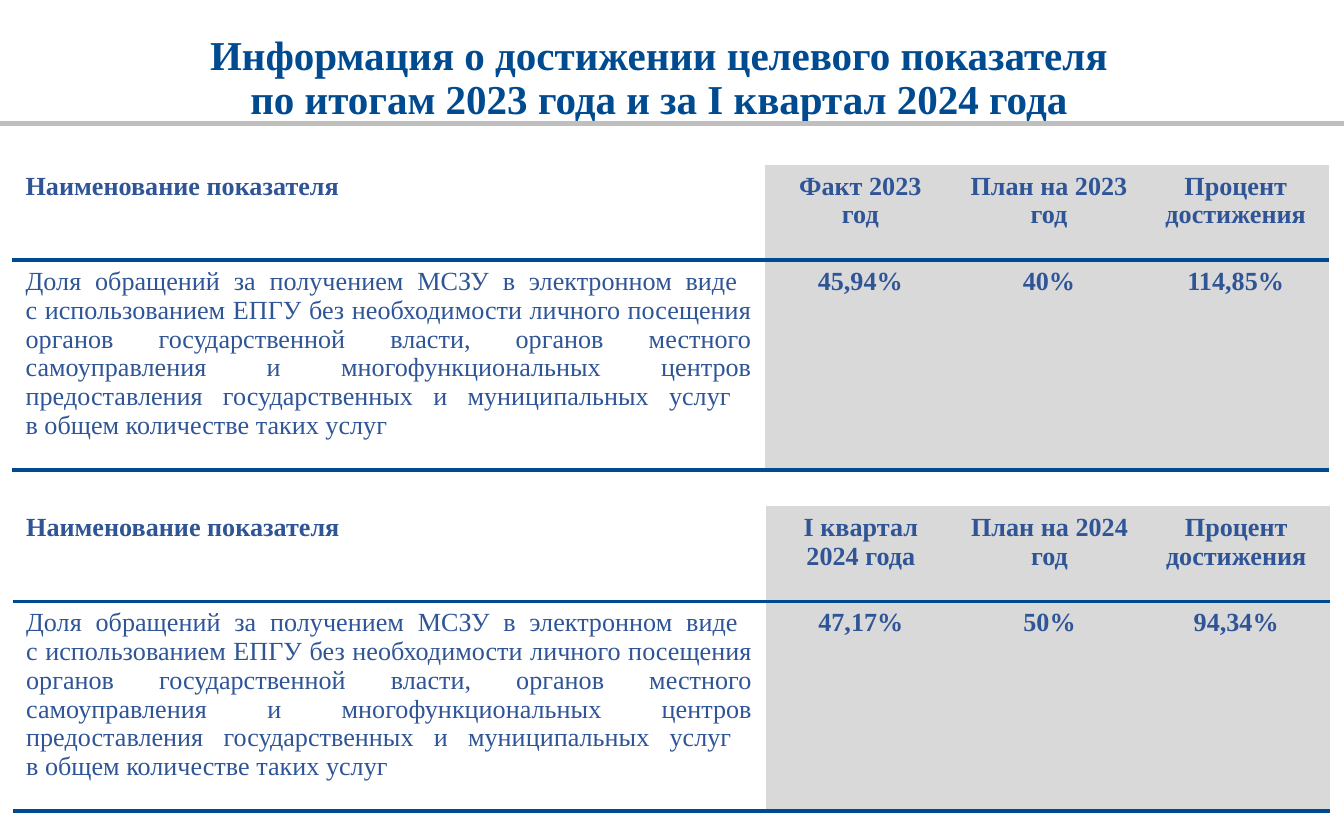
from lxml import etree
from pptx import Presentation
from pptx.dml.color import RGBColor
from pptx.enum.shapes import MSO_CONNECTOR
from pptx.enum.text import MSO_ANCHOR, MSO_AUTO_SIZE, PP_ALIGN
from pptx.oxml.ns import qn
from pptx.util import Cm, Pt

LEFT, CENTER, JUSTIFY = PP_ALIGN.LEFT, PP_ALIGN.CENTER, PP_ALIGN.JUSTIFY
NAVY = RGBColor(0x00, 0x4A, 0x90)
BLUE = RGBColor(0x2F, 0x55, 0x97)
GREY = RGBColor(0xD9, 0xD9, 0xD9)
RULE_GREY = RGBColor(0xBF, 0xBF, 0xBF)
FONT = "Times New Roman"

TITLE = "Информация о достижении целевого показателя по итогам 2023 года и за I квартал 2024 года"
NAME_HEADING = "Наименование показателя"
PERCENT_HEADING = "Процент достижения"
INDICATOR = (
    "Доля обращений за получением МСЗУ в электронном виде \n"
    "с использованием ЕПГУ без необходимости личного посещения органов "
    "государственной власти, органов местного самоуправления и "
    "многофункциональных центров предоставления государственных и муниципальных услуг \n"
    "в общем количестве таких услуг"
)
TABLES = [
    (0.23, 3.12, [
        [NAME_HEADING, "Факт 2023 год", "План на 2023 год", PERCENT_HEADING],
        [INDICATOR, "45,94%", "40%", "114,85%"],
    ]),
    (0.24, 9.57, [
        [NAME_HEADING, "I квартал 2024 года", "План на 2024 год", PERCENT_HEADING],
        [INDICATOR, "47,17%", "50%", "94,34%"],
    ]),
]
COLUMN_WIDTHS = [14.23, 3.6, 3.53, 3.53]
ROW_HEIGHTS = [1.8, 3.96]


def format_paragraph(para, size, color, bold, align):
    para.alignment = align
    for span in para.runs:
        span.font.name = FONT
        span.font.size = Pt(size)
        span.font.bold = bold
        span.font.color.rgb = color


def set_borders(cell, ruled_sides):
    properties = cell._tc.get_or_add_tcPr()
    for side in "LRTB":
        border = etree.SubElement(properties, qn(f"a:ln{side}"))
        if side in ruled_sides:
            border.set("w", str(Pt(2.21)))
            fill = etree.SubElement(border, qn("a:solidFill"))
            etree.SubElement(fill, qn("a:srgbClr"), val=str(NAVY))
        else:
            etree.SubElement(border, qn("a:noFill"))


def add_title(page):
    title = page.shapes.title
    title.left, title.top, title.width, title.height = Cm(3.25), Cm(0.56), Cm(18.4), Cm(1.73)
    frame = title.text_frame
    frame.text = TITLE
    frame.word_wrap = True
    frame.auto_size = MSO_AUTO_SIZE.NONE
    frame.vertical_anchor = MSO_ANCHOR.TOP
    para = frame.paragraphs[0]
    para.line_spacing = 0.88
    format_paragraph(para, 22, NAVY, True, CENTER)


def add_rule(page, width):
    rule = page.shapes.add_connector(MSO_CONNECTOR.STRAIGHT, 0, Cm(2.33), width, Cm(2.33))
    rule.line.color.rgb = RULE_GREY
    rule.line.width = Pt(2.5)
    etree.SubElement(rule._element.spPr, qn("a:effectLst"))


def add_indicator_table(page, left, top, rows):
    table = page.shapes.add_table(
        len(rows), len(COLUMN_WIDTHS), Cm(left), Cm(top),
        Cm(sum(COLUMN_WIDTHS)), Cm(sum(ROW_HEIGHTS)),
    ).table
    table.first_row = table.horz_banding = False
    for column, width in zip(table.columns, COLUMN_WIDTHS):
        column.width = Cm(width)
    for row, height in zip(table.rows, ROW_HEIGHTS):
        row.height = Cm(height)
    for i, texts in enumerate(rows):
        for j, text in enumerate(texts):
            cell = table.cell(i, j)
            para = cell.text_frame.paragraphs[0]
            para.text = text
            is_indicator = i > 0 and j == 0
            align = CENTER if j else JUSTIFY if is_indicator else LEFT
            format_paragraph(para, 14, BLUE, not is_indicator, align)
            set_borders(cell, "TB" if i else "B")
            if j:
                cell.fill.solid()
                cell.fill.fore_color.rgb = GREY
            else:
                cell.fill.background()


def main():
    deck = Presentation()
    deck.slide_width, deck.slide_height = Cm(25.4), Cm(15.88)
    page = deck.slides.add_slide(deck.slide_layouts[5])
    add_rule(page, deck.slide_width)
    add_title(page)
    for left, top, rows in TABLES:
        add_indicator_table(page, left, top, rows)
    deck.save("out.pptx")


if __name__ == "__main__":
    main()
